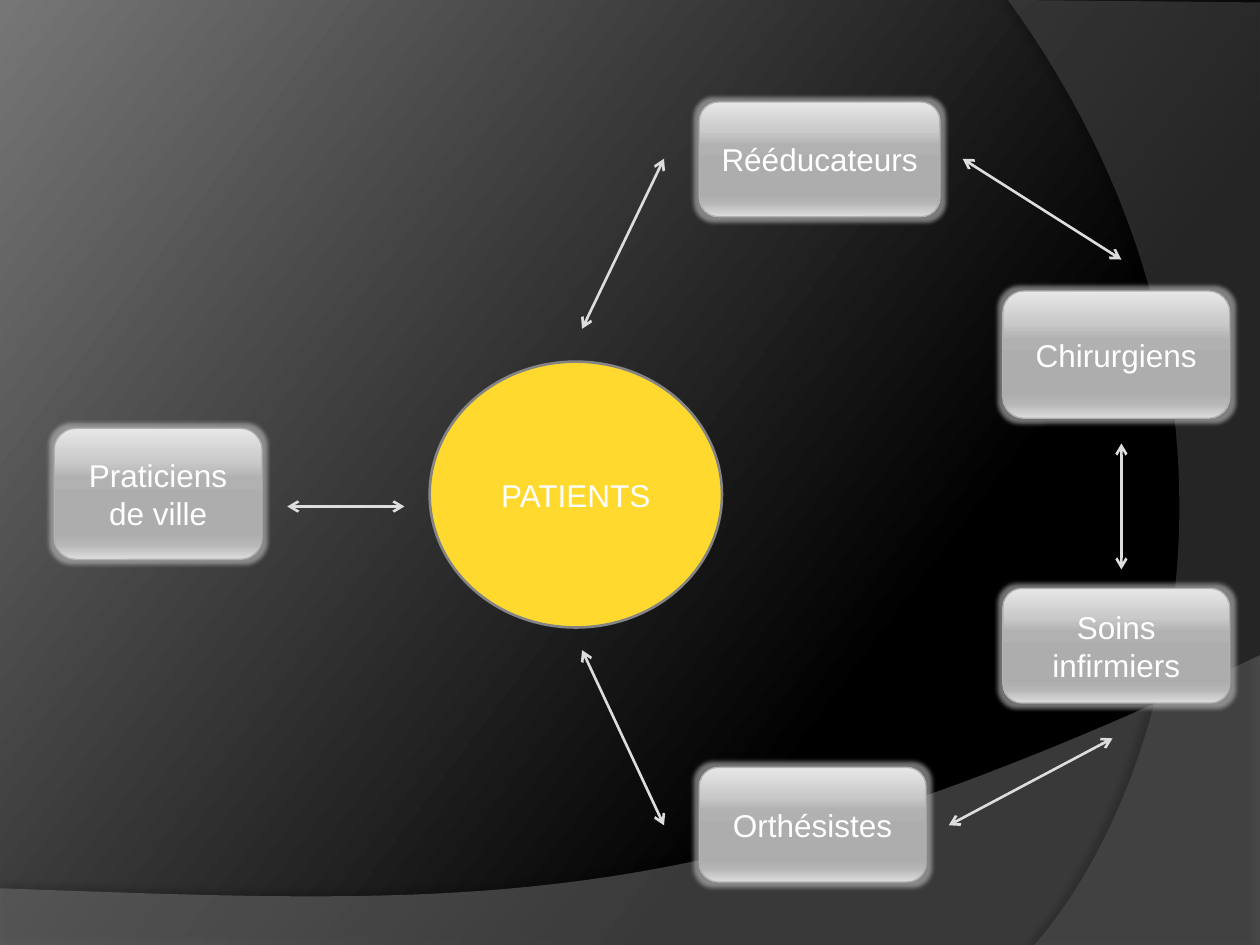
from lxml import etree
from pptx import Presentation
from pptx.dml.color import RGBColor
from pptx.enum.shapes import MSO_CONNECTOR, MSO_SHAPE
from pptx.enum.text import MSO_ANCHOR, PP_ALIGN
from pptx.oxml import parse_xml
from pptx.oxml.ns import nsdecls, qn
from pptx.util import Inches, Pt

rgb = RGBColor.from_string


def set_gradient(element, stops, angle):
    """Replace the first solid fill in element with a linear gradient."""
    stop_xml = "".join(
        f'<a:gs pos="{pos * 1000}"><a:srgbClr val="{color}"/></a:gs>' for pos, color in stops)
    solid = element.xpath(".//a:solidFill")[0]
    solid.getparent().replace(solid, parse_xml(
        f'<a:gradFill {nsdecls("a")} rotWithShape="1"><a:gsLst>{stop_xml}</a:gsLst>'
        f'<a:lin ang="{angle * 60000}" scaled="0"/></a:gradFill>'))


def add_effect(shape, tag, attributes, color, opacity):
    """Give shape one effect in place of the theme's."""
    shape.shadow.inherit = False
    shape.element.spPr.find(qn("a:effectLst")).append(parse_xml(
        f'<a:{tag} {nsdecls("a")} {attributes}><a:srgbClr val="{color}">'
        f'<a:alpha val="{opacity * 1000}"/></a:srgbClr></a:{tag}>'))


prs = Presentation()
prs.slide_width, prs.slide_height = Inches(10), Inches(7.5)
s = prs.slides.add_slide(prs.slide_layouts[6])
UNIT = prs.slide_width / 100  # grid of 100 columns by 75 rows

# Background
s.background.fill.solid()
set_gradient(s.element, [(0, "000000"), (30, "000000"), (100, "767676")], 217)

# Translucent waves: Bezier control points, closing corners, fill, shadow
waves = [
    ([(100, 52), (55.9, 72.9), (39.1, 71.9), (0, 70.5)], [(0, 75.1), (100, 75.1)],
     "7F7F7F", 45, 3.5, 270, 35),
    ([(82.1, 75), (93.5, 61.9), (101.8, 30), (80, 0)], [(100, 0.2), (100, 75)],
     "5E5E5E", 40, 4, 180, 45),
]
STEPS = 60
for controls, corners, color, opacity, distance, direction, shade in waves:
    curve = []
    for i in range(STEPS + 1):
        t = i / STEPS
        weights = ((1 - t) ** 3, 3 * t * (1 - t) ** 2, 3 * t ** 2 * (1 - t), t ** 3)
        curve.append([sum(w * c[axis] for w, c in zip(weights, controls)) for axis in (0, 1)])
    points = [(round(x * UNIT), round(y * UNIT)) for x, y in curve + corners]
    builder = s.shapes.build_freeform(*points[0])
    builder.add_line_segments(points[1:], close=True)
    wave = builder.convert_to_shape()
    wave.fill.solid()
    wave.fill.fore_color.rgb = rgb(color)
    alpha = etree.SubElement(wave.element.xpath("./p:spPr/a:solidFill/a:srgbClr")[0], qn("a:alpha"))
    alpha.set("val", str(opacity * 1000))
    wave.line.fill.background()
    add_effect(wave, "outerShdw",
               f'blurRad="{Pt(4)}" dist="{Pt(distance)}" dir="{direction * 60000}" rotWithShape="0"',
               "000000", shade)

# Patients in the centre, care givers around them
METAL = [(0, "E7E7E7"), (25, "CACACA"), (38, "B1B1B1"), (55, "ADADAD"),
         (80, "ACACAC"), (88, "B5B5B5"), (100, "DDDDDD")]
nodes = [
    ("PATIENTS", 34.1, 28.7, 23.2, 21.1),
    ("Praticiens de ville", 4.3, 34, 16.5, 10.4),
    ("Rééducateurs", 55.5, 8.1, 19.1, 9.1),
    ("Chirurgiens", 79.6, 23.1, 18, 10.1),
    ("Soins infirmiers", 79.6, 46.7, 18, 9.1),
    ("Orthésistes", 55.5, 60.9, 18, 9.1),
]
for label, *box in nodes:
    central = label == "PATIENTS"
    kind = MSO_SHAPE.OVAL if central else MSO_SHAPE.ROUNDED_RECTANGLE
    node = s.shapes.add_shape(kind, *[round(v * UNIT) for v in box])
    node.fill.solid()
    node.fill.fore_color.rgb = rgb("FFD92E")
    node.line.color.rgb = rgb("848484" if central else "B1B1B1")
    node.line.width = Pt(1.5 if central else 0.75)
    if central:
        node.shadow.inherit = False
    else:
        set_gradient(node.element.spPr, METAL, 90)
        add_effect(node, "glow", f'rad="{Pt(5)}"', "BFBFBF", 60)
    tf = node.text_frame
    tf.word_wrap = True
    tf.vertical_anchor = MSO_ANCHOR.MIDDLE
    tf.text = label
    p = tf.paragraphs[0]
    p.alignment = PP_ALIGN.CENTER
    p.font.name, p.font.size = "Arial", Pt(18)
    p.font.color.rgb = rgb("FFFFFF")
    r = p.runs[0]
    r.font.name, r.font.size = "Arial", Pt(18)
    r.font.color.rgb = rgb("FFFFFF")

# Two-way arrows between neighbours
arrows = [
    (52.7, 12.6, 46.2, 26.1),
    (89, 20.6, 76.4, 12.6),
    (89, 35.2, 89, 45.2),
    (52.7, 65.5, 46.2, 51.6),
    (88.3, 58.6, 75.3, 65.5),
    (32.1, 40.2, 22.8, 40.2),
]
for ends in arrows:
    arrow = s.shapes.add_connector(MSO_CONNECTOR.STRAIGHT, *[round(v * UNIT) for v in ends])
    arrow.line.color.rgb = rgb("DDDDDD")
    arrow.line.width = Pt(1.5)
    spPr = arrow.element.spPr
    for end in ("a:headEnd", "a:tailEnd"):
        etree.SubElement(spPr.find(qn("a:ln")), qn(end)).set("type", "arrow")
    etree.SubElement(spPr, qn("a:effectLst"))

prs.save("out.pptx")
